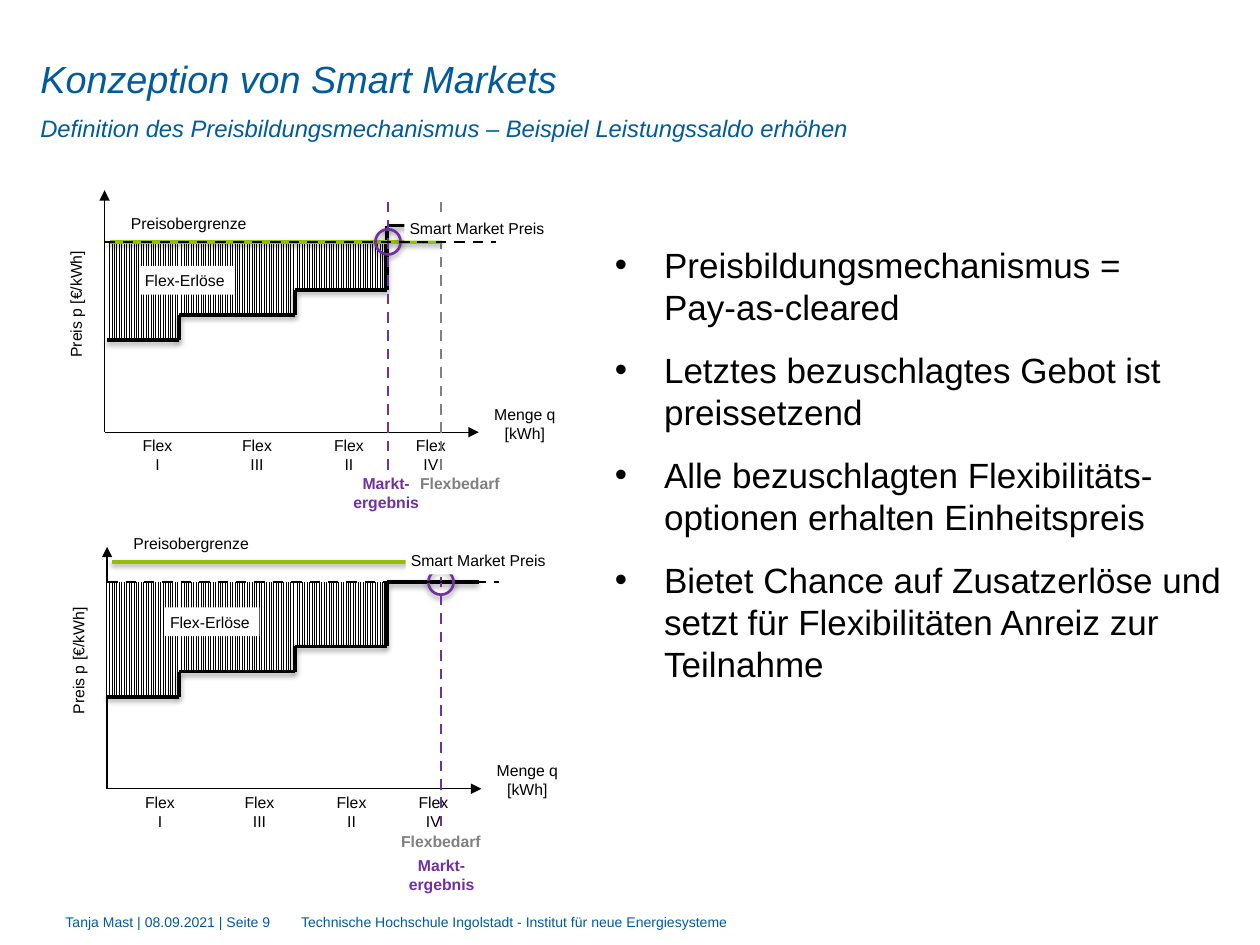
from lxml import etree
from pptx import Presentation
from pptx.dml.color import RGBColor
from pptx.enum.dml import MSO_LINE, MSO_PATTERN
from pptx.enum.shapes import MSO_CONNECTOR, MSO_SHAPE
from pptx.enum.text import MSO_ANCHOR, PP_ALIGN
from pptx.oxml.ns import qn
from pptx.util import Inches, Pt

COLORS = {"blue": "005A9B", "black": "000000", "white": "FFFFFF",
          "gray": "808080", "purple": "7030A0", "green": "96BE00"}

TITLE = "Konzeption von Smart Markets"
SUBTITLE = "Definition des Preisbildungsmechanismus – Beispiel Leistungssaldo erhöhen"
FOOTER = [(0.52, 1.8, "Tanja Mast | 08.09.2021 | Seite 9"),
          (2.39, 4.6, "Technische Hochschule Ingolstadt - Institut für neue Energiesysteme")]
BULLETS = [
    "Preisbildungsmechanismus =\vPay-as-cleared",
    "Letztes bezuschlagtes Gebot ist preissetzend",
    "Alle bezuschlagten Flexibilitäts-optionen erhalten Einheitspreis",
    "Bietet Chance auf Zusatzerlöse und setzt für Flexibilitäten Anreiz zur Teilnahme",
]

STEP_X = [0.85, 1.42, 2.34, 3.07, 3.8]
STEP_HEIGHTS = [0.73, 0.93, 1.13, 1.64]
FLEX_LABELS = [("I", 1.25), ("III", 2.04), ("II", 2.77), ("IV", 3.42)]
DEMAND_X = 3.5
CHARTS = [
    {"x": 0.83, "y": 3.43, "cap": 1.92, "price": 1.92, "market_x": 3.08,
     "revenue": (1.11, 2.11), "price_label": (3.21, 1.71, 0.2),
     "demand_label": (3.33, 3.76), "market_label": (2.8, 3.76)},
    {"x": 0.85, "y": 6.26, "cap": 4.46, "price": 4.62, "market_x": 3.5,
     "revenue": (1.31, 4.82), "price_label": (3.22, 4.33, 0.23),
     "demand_label": (3.18, 6.6), "market_label": (3.24, 6.79)},
]

prs = Presentation()
prs.slide_width, prs.slide_height = Inches(10), Inches(7.5)
s = prs.slides.add_slide(prs.slide_layouts[6])


def rgb(name):
    return RGBColor.from_string(COLORS[name])


def write(sp, text, size=9, color="black", bold=False, italic=False, align=PP_ALIGN.LEFT,
          anchor=MSO_ANCHOR.TOP, inset=(0, 0), wrap=True, spacing=None, before=0, bullet=False):
    tf = sp.text_frame
    tf.word_wrap = wrap
    tf.vertical_anchor = anchor
    tf.margin_left = tf.margin_right = Inches(inset[0])
    tf.margin_top = tf.margin_bottom = Inches(inset[1])
    for i, line in enumerate(text.split("\n")):
        p = tf.add_paragraph() if i else tf.paragraphs[0]
        p.text = line
        p.alignment = align
        if spacing:
            p.line_spacing = spacing
        if i and before:
            p.space_before = Pt(before)
        if bullet:
            pPr = p._p.get_or_add_pPr()
            pPr.set("marL", str(Inches(0.39)))
            pPr.set("indent", str(-Inches(0.39)))
            etree.SubElement(pPr, qn("a:buFont"), typeface="Arial")
            etree.SubElement(pPr, qn("a:buChar"), char="•")
        for r in p.runs:
            r.font.name, r.font.size = "Arial", Pt(size)
            r.font.bold, r.font.italic = bold, italic
            r.font.color.rgb = rgb(color)


def label(x, y, w, h, text, **fmt):
    sp = s.shapes.add_textbox(Inches(x), Inches(y), Inches(w), Inches(h))
    write(sp, text, **fmt)
    return sp


def set_effects(sp, shadow):
    effects = etree.SubElement(sp._element.spPr, qn("a:effectLst"))
    if shadow:
        shade = etree.SubElement(effects, qn("a:outerShdw"), blurRad=str(Pt(3.1)),
                                 dist=str(Pt(1.6)), dir="5400000", rotWithShape="0")
        color = etree.SubElement(shade, qn("a:srgbClr"), val=COLORS["black"])
        etree.SubElement(color, qn("a:alpha"), val="38000")


def line(x1, y1, x2, y2, color="black", width=2, dash=False, arrow=False, shadow=False):
    sp = s.shapes.add_connector(MSO_CONNECTOR.STRAIGHT, Inches(x1), Inches(y1),
                                Inches(x2), Inches(y2))
    sp.line.color.rgb = rgb(color)
    sp.line.width = Pt(width)
    if dash:
        sp.line.dash_style = MSO_LINE.DASH
    if arrow:
        etree.SubElement(sp.line._get_or_add_ln(), qn("a:tailEnd"), type="triangle")
    set_effects(sp, shadow)


def box(x, y, w, h, hatched=False):
    sp = s.shapes.add_shape(MSO_SHAPE.RECTANGLE, Inches(x), Inches(y), Inches(w), Inches(h))
    sp.shadow.inherit = False
    sp.line.fill.background()
    if hatched:
        sp.fill.patterned()
        sp.fill.pattern = MSO_PATTERN.LIGHT_VERTICAL
        sp.fill.fore_color.rgb = rgb("black")
        sp.fill.back_color.rgb = rgb("white")
    else:
        sp.fill.solid()
        sp.fill.fore_color.rgb = rgb("white")
    return sp


def ring(cx, cy, d=0.2):
    sp = s.shapes.add_shape(MSO_SHAPE.OVAL, Inches(cx - d / 2), Inches(cy - d / 2),
                            Inches(d), Inches(d))
    sp.fill.background()
    sp.line.color.rgb = rgb("purple")
    sp.line.width = Pt(1.5)
    set_effects(sp, True)


def draw_chart(c):
    x, y, price = c["x"], c["y"], c["price"]
    centered = {"align": PP_ALIGN.CENTER}
    single = {**centered, "wrap": False}

    line(x, y, x, y - 1.92, width=0.75, arrow=True)
    line(x, y, x + 2.97, y, width=0.75, arrow=True)
    label(x - 0.66, y - 1.09, 0.86, 0.15, "Preis p [€/kWh]", **single).rotation = 270
    label(x + 3.09, y - 0.22, 0.49, 0.3, "Menge q\n[kWh]", **single)
    for name, cx in FLEX_LABELS:
        label(cx + x - 0.83 - 0.45, y + 0.03, 0.9, 0.3, f"Flex\n{name}", **centered)
    label(x + 0.11, c["cap"] - 0.27, 2.08, 0.25, "Preisobergrenze", inset=(0.1, 0.05))
    label(*c["demand_label"], 0.64, 0.15, "Flexbedarf", color="gray", bold=True, **single)
    label(*c["market_label"], 0.53, 0.3, "Markt-\nergebnis", color="purple", bold=True, **single)
    line_top, line_bottom = y - 1.83, y + 0.3
    line(DEMAND_X, line_top, DEMAND_X, line_bottom, "gray", 1.5, dash=True)

    levels = [y - h for h in STEP_HEIGHTS]
    steps = list(zip(STEP_X, STEP_X[1:], levels))
    for x1, x2, level in steps[:3]:
        box(x1, price, x2 - x1, level - price, hatched=True)
    write(box(*c["revenue"], 0.75, 0.23), "Flex-Erlöse", inset=(0.04, 0.04))
    for x1, x2, level in steps:
        line(x1, level, x2, level, shadow=True)
    for edge, low, high in zip(STEP_X[1:], levels, levels[1:]):
        line(edge, high, edge, low, shadow=True)

    line(DEMAND_X, c["cap"], x + 0.04, c["cap"], "green", shadow=True)
    ring(c["market_x"], price)
    line(c["market_x"], line_top, c["market_x"], line_bottom, "purple", 1.5, dash=True)
    line(x, price, x + 3.11, price, width=1.5, dash=True)
    px, py, ph = c["price_label"]
    write(box(px, py, 1.18, ph), "Smart Market Preis", inset=(0.04, 0.04),
          anchor=MSO_ANCHOR.MIDDLE)


label(0.32, 0.44, 6.92, 0.36, TITLE, size=21.6, color="blue", italic=True,
      anchor=MSO_ANCHOR.MIDDLE)
label(0.32, 0.81, 6.92, 0.37, SUBTITLE, size=13.6, color="blue", italic=True, spacing=1.4)
label(4.88, 1.93, 5.01, 5.19, "\n".join(BULLETS), size=20, before=12, bullet=True)
for left, width, text in FOOTER:
    label(left, 7.25, width, 0.13, text, size=8, color="blue")
for chart in CHARTS:
    draw_chart(chart)

prs.save("out.pptx")
